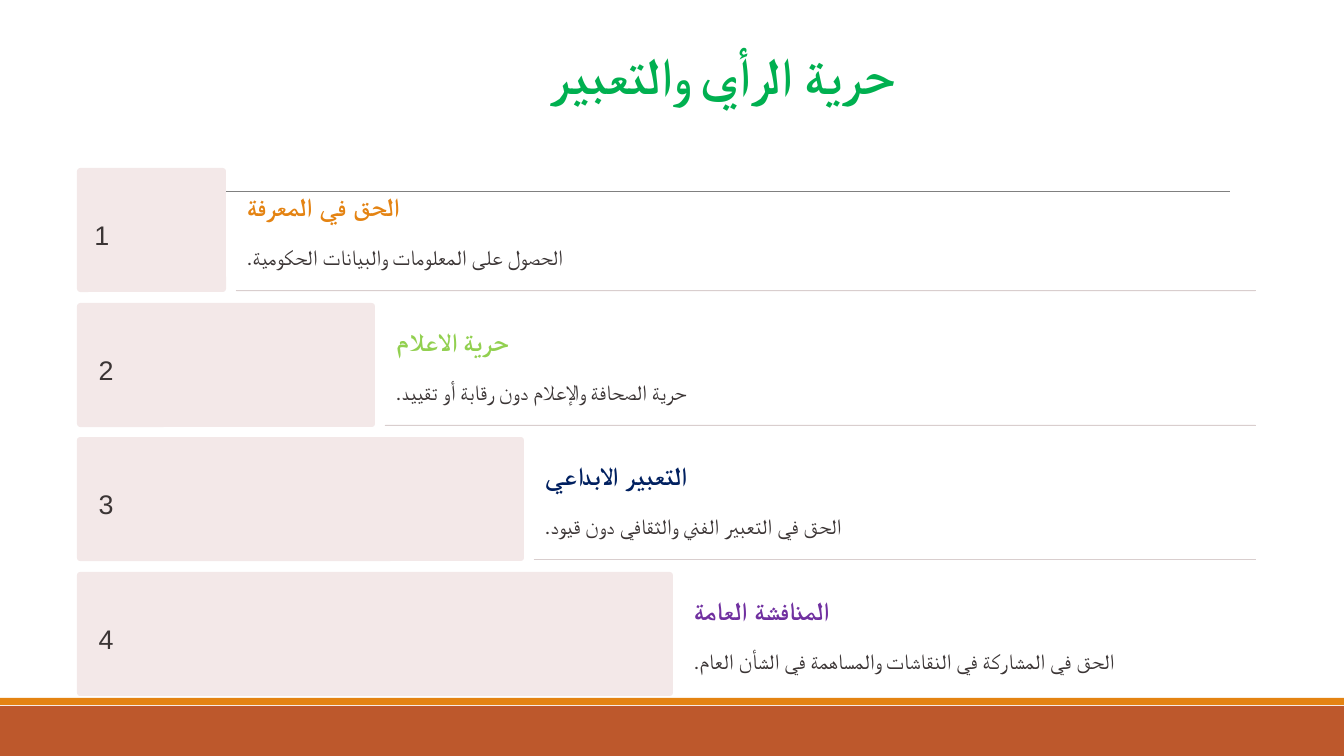
from dataclasses import dataclass

from pptx import Presentation
from pptx import util as u
from pptx.dml.color import RGBColor
from pptx.enum import shapes, text
from pptx.oxml.ns import qn
from lxml import etree

PX = 12192000 // 1344 + 12192000 % 1344 / 1344  # EMU in one px


@dataclass(frozen=True)
class Theme:
    footer: str = "BD582C"
    accent: str = "E48312"
    line: str = "808080"
    block: str = "F3E8E8"
    rule: str = "D9CECE"
    ink: str = "3B3535"
    title: str = "00B050"
    title_pt: float = 36.7
    number_pt: float = 19.2
    heading_pt: float = 18.3
    body_pt: float = 15.4


@dataclass(frozen=True)
class Step:
    heading: str
    body: str
    color: str
    font: str
    body_width: int


THEME = Theme()
LEFT, TOP, RIGHT = 77, 168, 1256
STEP_WIDTH, BLOCK_HEIGHT = 149, 124
THREE_PITCHES = 404

STEPS = [
    Step("الحق في المعرفة", "الحصول على المعلومات والبيانات الحكومية.",
         "E48312", "Arial", 375),
    Step("حرية الاعلام", "حرية الصحافة والإعلام دون رقابة أو تقييد.",
         "92D050", "Calibri", 346),
    Step("التعبير الابداعي", "الحق في التعبير الفني والثقافي دون قيود.",
         "002060", "Arial", 351),
    Step("المنافشة العامة",
         "الحق في المشاركة في النقاشات والمساهمة في الشأن العام.",
         "7030A0", "Arial", 507),
]


def px(n: int) -> u.Emu:
    return u.Emu(round(n * PX))


def write(tf, content: str, *, size: float, color: str, font: str,
          leading: float, align=text.PP_ALIGN.LEFT, bold: bool = False) -> None:
    """Fill a text frame with one right-to-left paragraph."""
    tf.margin_left = tf.margin_top = tf.margin_right = tf.margin_bottom = 0
    tf.word_wrap = False
    tf.auto_size = text.MSO_AUTO_SIZE.NONE
    tf.vertical_anchor = text.MSO_ANCHOR.TOP
    p = tf.paragraphs[0]
    p.alignment = align
    p.line_spacing = u.Pt(leading)
    p._p.get_or_add_pPr().set("rtl", "1")
    r = p.add_run()
    r.text = content
    r.font.size = u.Pt(size)
    r.font.bold = bold
    r.font.color.rgb = RGBColor.from_string(color)
    r.font.name = font
    # Arabic script takes the complex-script font
    etree.SubElement(r._r.get_or_add_rPr(), qn("a:cs")).set("typeface", font)


def add_text(s, x: int, y: int, w: int, h: int, content: str, **fmt) -> None:
    box = s.shapes.add_textbox(px(x), px(y), px(w), px(h))
    write(box.text_frame, content, **fmt)


def add_box(s, x: int, y: int, w: int, h: int, color: str,
            radius: float = 0) -> None:
    kind = shapes.MSO_SHAPE.ROUNDED_RECTANGLE if radius else shapes.MSO_SHAPE.RECTANGLE
    sp = s.shapes.add_shape(kind, px(x), px(y), px(w), px(h))
    if radius:
        sp.adjustments[0] = radius
    sp.shadow.inherit = False
    sp.fill.solid()
    sp.fill.fore_color.rgb = RGBColor.from_string(color)
    sp.line.fill.background()


def add_line(s, x1: int, y1: int, x2: int, y2: int, color: str, width: float) -> None:
    cx = s.shapes.add_connector(shapes.MSO_CONNECTOR.STRAIGHT,
                                px(x1), px(y1), px(x2), px(y2))
    cx.line.color.rgb = RGBColor.from_string(color)
    cx.line.width = u.Pt(width)
    etree.SubElement(cx._element.spPr, qn("a:effectLst"))


def add_step(s, i: int, step: Step) -> None:
    top = TOP + round(i * THREE_PITCHES / 3)
    width = STEP_WIDTH * (i + 1)
    edge = LEFT + width
    add_box(s, LEFT, top, width, BLOCK_HEIGHT, THEME.block, radius=0.026)
    add_text(s, 98, top + 40, 8 if i == 0 else 16, 43, str(i + 1),
             size=THEME.number_pt, color=THEME.ink, font="Arial",
             leading=30.8, align=text.PP_ALIGN.CENTER)
    add_text(s, edge + 21, top + 22, 257, 32, step.heading,
             size=THEME.heading_pt, color=step.color, font=step.font,
             leading=22.9, bold=True)
    add_text(s, edge + 21, top + 67, step.body_width, 35, step.body,
             size=THEME.body_pt, color=THEME.ink, font="Roboto", leading=24.6)
    if i < len(STEPS) - 1:
        add_box(s, edge + 10, top + 122, RIGHT - edge - 10, 1, THEME.rule, radius=0.5)


def main() -> None:
    prs = Presentation()
    prs.slide_width, prs.slide_height = px(1344), px(756)
    s = prs.slides.add_slide(prs.slide_layouts.get_by_name("Title Only"))

    # Footer bands and header line
    add_box(s, 0, 706, 1344, 50, THEME.footer)
    add_box(s, 0, 698, 1344, 7, THEME.accent)
    add_line(s, 132, 191, 1230, 191, THEME.line, 0.5)

    # Title
    title = s.shapes.title
    title.left, title.top, title.width, title.height = px(382), px(41), px(514), px(65)
    write(title.text_frame, "حرية الرأي والتعبير", size=THEME.title_pt,
          color=THEME.title, font="Calibri", leading=45.8,
          align=text.PP_ALIGN.RIGHT, bold=True)

    # Staircase of rights
    for i, step in enumerate(STEPS):
        add_step(s, i, step)

    prs.save("out.pptx")


if __name__ == "__main__":
    main()
